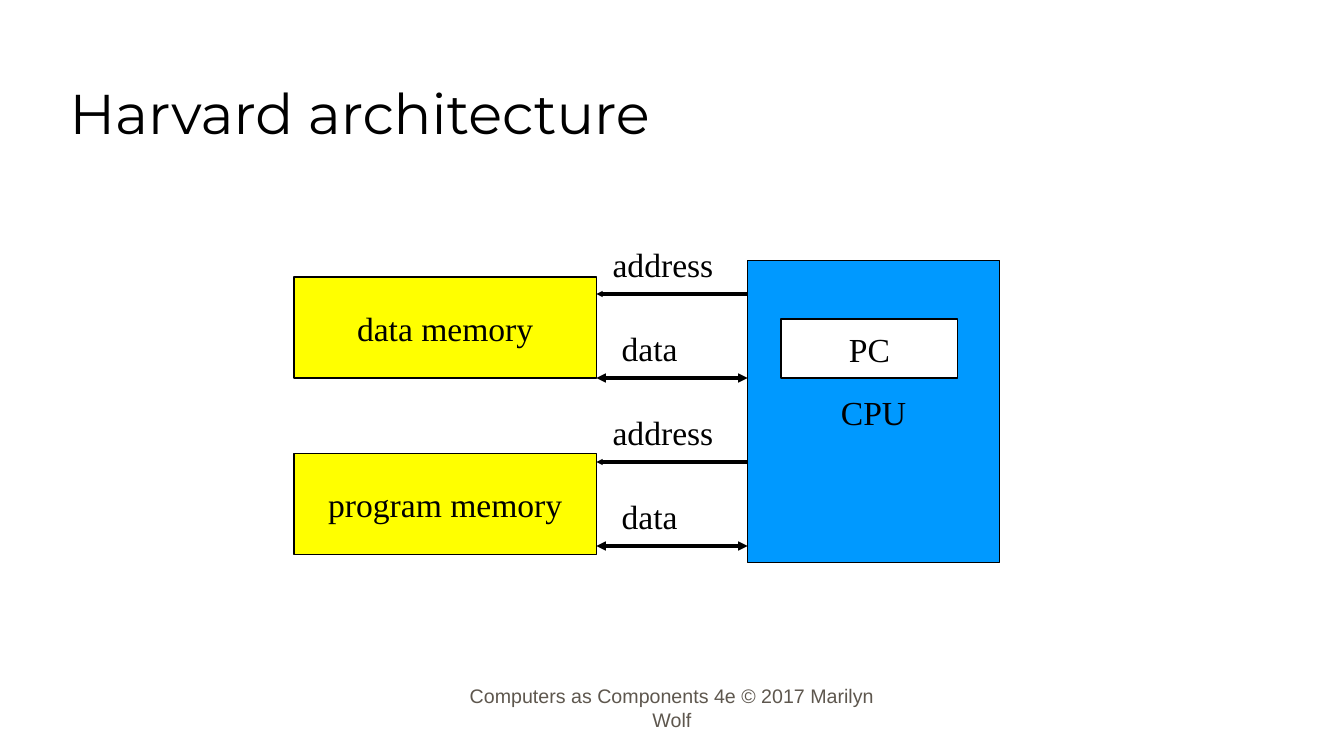
"""Build the Harvard architecture slide."""
from dataclasses import dataclass

from lxml import etree
from pptx import Presentation
from pptx import util as u
from pptx.dml.color import RGBColor
from pptx.enum import shapes, text
from pptx.oxml import ns

BLACK = RGBColor(0x00, 0x00, 0x00)
WHITE = RGBColor(0xFF, 0xFF, 0xFF)
BLUE = RGBColor(0x00, 0x99, 0xFF)
YELLOW = RGBColor(0xFF, 0xFF, 0x00)
GREY = RGBColor(0x5E, 0x57, 0x4E)
SERIF = "Times New Roman"
MEMORY_RIGHT, CPU_LEFT = 426, 534
FIRST_BUS, BUS_STEP = 210, 60


@dataclass
class Block:
    label: str
    left: float
    top: float
    width: float
    height: float
    fill: RGBColor


@dataclass
class Bus:
    label: str
    label_left: float
    label_width: float
    start: float
    end: float
    heads: tuple[str, ...]
    head_size: str


BLOCKS = [
    Block("CPU", CPU_LEFT, 186, 180, 216, BLUE),
    Block("PC", 558, 228, 126, 42, WHITE),
    Block("data memory", 210, 198, 216, 72, YELLOW),
    Block("program memory", 210, 324, 216, 72, YELLOW),
]
ADDRESS = Bus("address", 430.5, 86.4, CPU_LEFT, MEMORY_RIGHT, ("tailEnd",), "sm")
DATA = Bus("data", 437, 54.7, MEMORY_RIGHT, CPU_LEFT, ("headEnd", "tailEnd"), "med")


def write(shape, words: str, font: str, size: float, color: RGBColor,
          align, anchor, wrap: bool) -> None:
    frame = shape.text_frame
    frame.word_wrap = wrap
    frame.auto_size = text.MSO_AUTO_SIZE.NONE
    frame.vertical_anchor = anchor
    para = frame.paragraphs[0]
    para.text = words
    para.alignment = align
    para.font.name = font
    para.font.size = u.Pt(size)
    para.font.color.rgb = color


def draw_block(page, block: Block) -> None:
    box = page.shapes.add_shape(
        shapes.MSO_SHAPE.RECTANGLE, u.Pt(block.left), u.Pt(block.top),
        u.Pt(block.width), u.Pt(block.height))
    box.shadow.inherit = False
    box.fill.solid()
    box.fill.fore_color.rgb = block.fill
    box.line.color.rgb = BLACK
    box.line.width = u.Pt(1)
    write(box, block.label, SERIF, 24, BLACK,
          text.PP_ALIGN.CENTER, text.MSO_ANCHOR.MIDDLE, False)


def draw_bus(page, bus: Bus, level: float) -> None:
    arrow = page.shapes.add_connector(
        shapes.MSO_CONNECTOR.STRAIGHT, u.Pt(bus.start), u.Pt(level),
        u.Pt(bus.end), u.Pt(level))
    arrow.line.color.rgb = BLACK
    arrow.line.width = u.Pt(2.25)
    outline = arrow.line._get_or_add_ln()
    for head in bus.heads:
        etree.SubElement(outline, ns.qn(f"a:{head}"), type="triangle",
                         w=bus.head_size, len=bus.head_size)
    etree.SubElement(arrow._element.spPr, ns.qn("a:effectLst"))
    label = page.shapes.add_textbox(
        u.Pt(bus.label_left), u.Pt(level - 39), u.Pt(bus.label_width), u.Pt(36))
    write(label, bus.label, SERIF, 24, BLACK,
          text.PP_ALIGN.LEFT, text.MSO_ANCHOR.TOP, False)


def main() -> None:
    deck = Presentation()
    deck.slide_width, deck.slide_height = u.Pt(960), u.Pt(540)
    page = deck.slides.add_slide(deck.slide_layouts.get_by_name("Title Only"))

    title = page.shapes.title
    title.left, title.top = u.Pt(42.5), u.Pt(18)
    title.width, title.height = u.Pt(816), u.Pt(90)
    write(title, "Harvard architecture", "Montserrat", 40, BLACK,
          text.PP_ALIGN.LEFT, text.MSO_ANCHOR.BOTTOM, True)

    for block in BLOCKS:
        draw_block(page, block)
    for index, bus in enumerate([ADDRESS, DATA] * 2):
        draw_bus(page, bus, FIRST_BUS + index * BUS_STEP)

    footer = page.shapes.add_textbox(u.Pt(328), u.Pt(490), u.Pt(304), u.Pt(36))
    write(footer, "Computers as Components 4e © 2017 Marilyn Wolf", "Arial", 14,
          GREY, text.PP_ALIGN.CENTER, text.MSO_ANCHOR.BOTTOM, True)
    deck.save("out.pptx")


if __name__ == "__main__":
    main()
